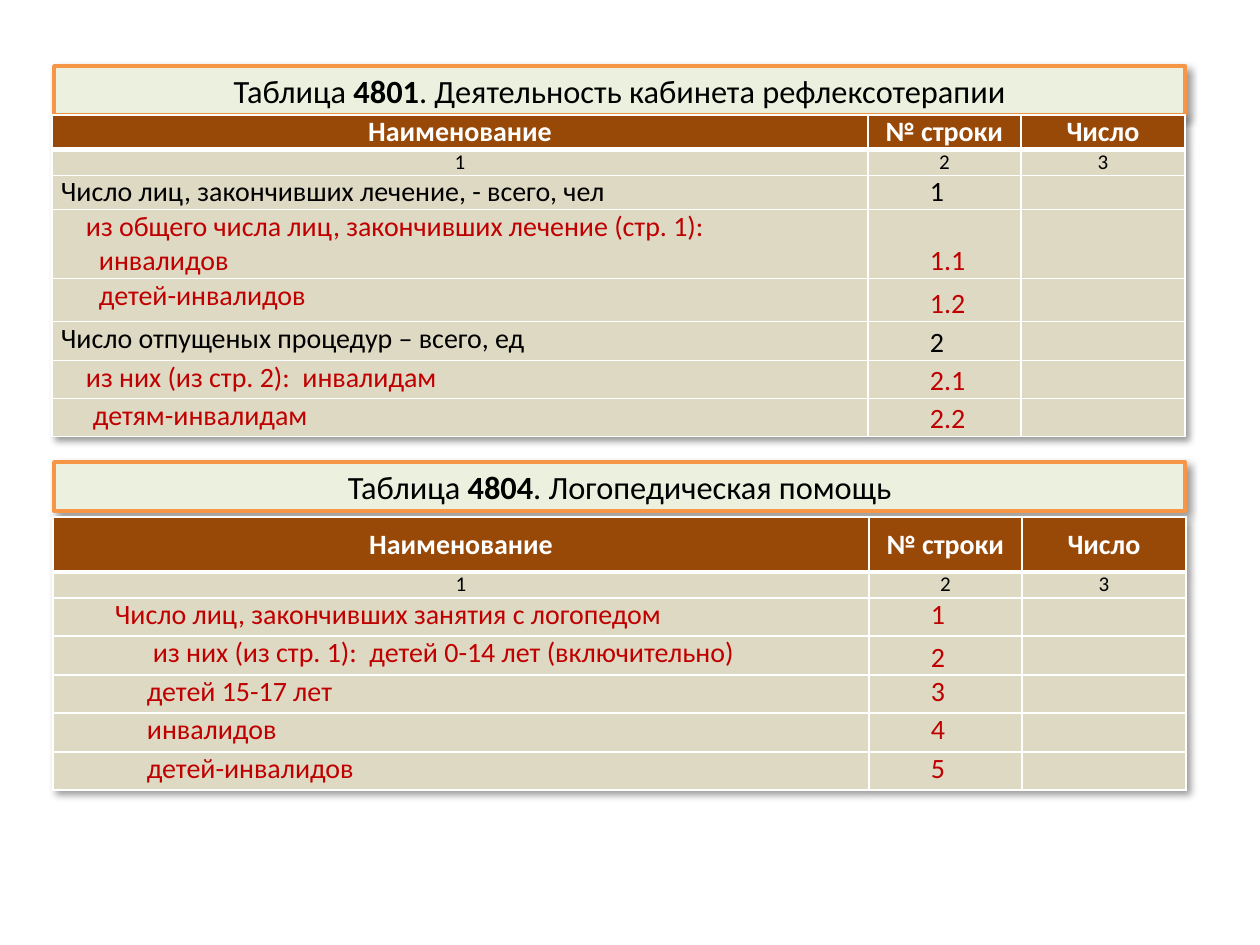
import pptx
import pptx.util
import pptx.dml.color
import pptx.enum.shapes
import pptx.enum.text
import pptx.oxml
import pptx.oxml.ns
import lxml.etree

SCALE = 914400 / 126
HUES = {"head": "984807", "body": "DDD9C3", "title": "EBF1DE", "edge": "F79646",
        "white": "FFFFFF", "black": "000000", "red": "C00000"}
RGB = {name: pptx.dml.color.RGBColor.from_string(hue) for name, hue in HUES.items()}
NS = 'xmlns:a="http://schemas.openxmlformats.org/drawingml/2006/main"'
SHADE = (f'<a:effectLst {NS}><a:outerShdw blurRad="50800" dist="38100" dir="2700000" '
         f'algn="tl" rotWithShape="0"><a:srgbClr val="{HUES["black"]}">'
         '<a:alpha val="40000"/></a:srgbClr></a:outerShdw></a:effectLst>')
MID = pptx.enum.text.MSO_ANCHOR.MIDDLE
TOP = pptx.enum.text.MSO_ANCHOR.TOP
LOW = pptx.enum.text.MSO_ANCHOR.BOTTOM
LEFT = pptx.enum.text.PP_ALIGN.LEFT
MIDDLE = pptx.enum.text.PP_ALIGN.CENTER


def px(size):
    return round(size * SCALE)


def write(para, text, hue, **look):
    run = para.add_run()
    run.text = text
    for key, value in ({"name": "Calibri"} | look).items():
        setattr(run.font, key, value)
    run.font.color.rgb = RGB[hue]


# Each body row: height, lines as (indent, text), row number, number anchor, colour
WIDE = [816, 153, 164]
HEAD = ["Наименование", "№ строки", "Число"]
PARTS = [
    {"code": "4801", "name": ". Деятельность кабинета рефлексотерапии",
     "bar": 66, "left": 52, "top": 115, "tall": [33, 26], "rows": [
         (34, [(0, "Число лиц, закончивших лечение, - всего, чел")], "1", LOW, "black"),
         (69, [(25, "из общего числа лиц, закончивших лечение (стр. 1):"),
               (38, "инвалидов")], "1.1", LOW, "red"),
         (43, [(38, "детей-инвалидов")], "1.2", LOW, "red"),
         (39, [(0, "Число отпущеных процедур – всего, ед")], "2", LOW, "black"),
         (38, [(25, "из них (из стр. 2):  инвалидам")], "2.1", LOW, "red"),
         (38, [(32, "детям-инвалидам")], "2.2", LOW, "red")]},
    {"code": "4804", "name": ". Логопедическая помощь",
     "bar": 462, "left": 53, "top": 517, "tall": [55, 26], "rows": [
         (38, [(53, "Число лиц, закончивших занятия с логопедом")], "1", TOP, "red"),
         (39, [(91, "из них (из стр. 1):  детей 0-14 лет (включительно)")], "2", LOW, "red"),
         (38, [(85, "детей 15-17 лет")], "3", TOP, "red"),
         (39, [(85, "инвалидов")], "4", TOP, "red"),
         (38, [(85, "детей-инвалидов")], "5", TOP, "red")]},
]

deck = pptx.Presentation()
deck.slide_width, deck.slide_height = px(1260), px(945)
slide = deck.slides.add_slide(deck.slide_layouts[6])

for part in PARTS:
    # Title bar
    bar = slide.shapes.add_shape(pptx.enum.shapes.MSO_SHAPE.RECTANGLE,
                                 px(54), px(part["bar"]), px(1131), px(49))
    bar.fill.solid()
    bar.fill.fore_color.rgb = RGB["title"]
    bar.line.color.rgb = RGB["edge"]
    bar.line.width = pptx.util.Pt(2)
    bar.shadow.inherit = False
    blank = bar.element.spPr.find(pptx.oxml.ns.qn("a:effectLst"))
    bar.element.spPr.replace(blank, pptx.oxml.parse_xml(SHADE))
    bar.text_frame.word_wrap = True
    bar.text_frame.vertical_anchor = MID
    para = bar.text_frame.paragraphs[0]
    para.alignment = MIDDLE
    for text, bold in [("Таблица ", False), (part["code"], True), (part["name"], False)]:
        write(para, text, "black", size=pptx.util.Pt(18.5), bold=bold)

    # Table grid
    tall = part["tall"] + [row[0] for row in part["rows"]]
    grid = slide.shapes.add_table(len(tall), len(WIDE), px(part["left"]), px(part["top"]),
                                  px(sum(WIDE)), px(sum(tall))).table
    grid._tbl.tblPr.insert(0, pptx.oxml.parse_xml(SHADE))
    for col, size in zip(grid.columns, WIDE):
        col.width = px(size)
    for row, size in zip(grid.rows, tall):
        row.height = px(size)

    # Cell content: lines, anchor, alignment, colour, size
    cells = [[([(0, text)], MID, MIDDLE, "white", 16) for text in HEAD],
             [([(0, text)], TOP, MIDDLE, "black", 12) for text in "123"]]
    for _, lines, code, anchor, hue in part["rows"]:
        cells.append([(lines, TOP, LEFT, hue, 16),
                      ([(53, code)], anchor, LEFT, hue, 16),
                      ([(0, "")], TOP, LEFT, hue, 16)])

    for y, line in enumerate(cells):
        for x, (lines, anchor, align, hue, size) in enumerate(line):
            cell = grid.cell(y, x)
            form = {"margin_left": px(9), "margin_right": px(9), "margin_top": 0,
                    "margin_bottom": 0, "vertical_anchor": anchor}
            for key, value in form.items():
                setattr(cell, key, value)

            # Borders, thicker around the foot of the header
            trim = cell._tc.get_or_add_tcPr()
            for side in "LRTB":
                thick = (side == "B" and y == 0) or (side == "T" and y == 1)
                trim.append(pptx.oxml.parse_xml(
                    f'<a:ln{side} {NS} w="{38100 if thick else 12700}"><a:solidFill>'
                    f'<a:srgbClr val="{HUES["white"]}"/></a:solidFill></a:ln{side}>'))
            cell.fill.solid()
            cell.fill.fore_color.rgb = RGB["body" if y else "head"]

            # Text
            for n, (inset, text) in enumerate(lines):
                frame = cell.text_frame
                para = frame.add_paragraph() if n else frame.paragraphs[0]
                para.alignment = align
                if inset:
                    para._p.get_or_add_pPr().set("marL", str(px(inset)))
                if text:
                    write(para, text, hue, size=pptx.util.Pt(size), bold=y == 0)
                else:
                    lxml.etree.SubElement(para._p, pptx.oxml.ns.qn("a:endParaRPr"),
                                          sz=str(size * 100))

deck.save("out.pptx")
